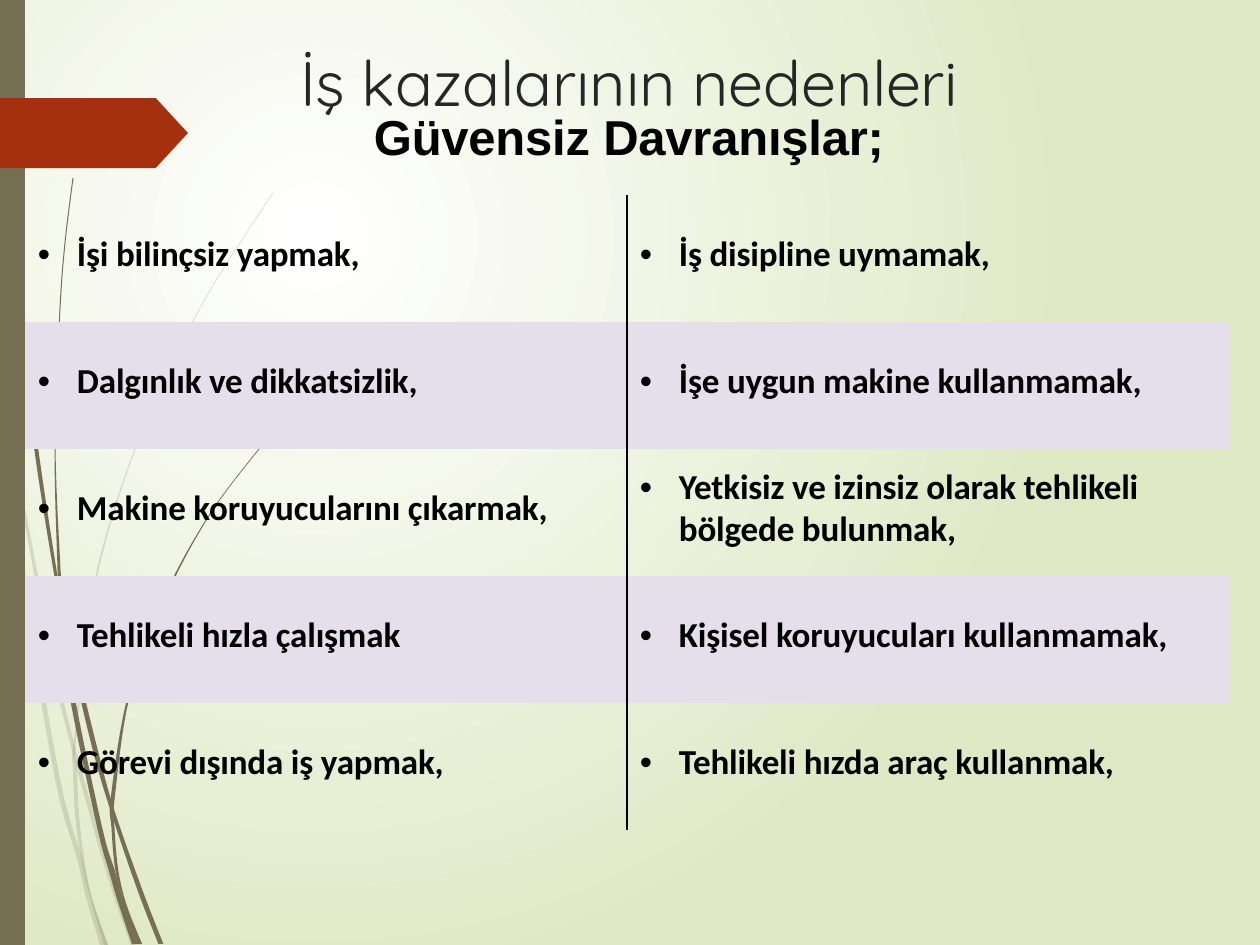
import pptx
import pptx.util
import pptx.dml.color
import pptx.enum.shapes
import pptx.enum.text
import pptx.oxml
import pptx.oxml.ns

RGB = pptx.dml.color.RGBColor
SHAPE = pptx.enum.shapes.MSO_SHAPE
ANCHOR = pptx.enum.text.MSO_ANCHOR
ALIGN = pptx.enum.text.PP_ALIGN
qn = pptx.oxml.ns.qn
NS = pptx.oxml.ns.nsdecls("a")

BLACK = RGB(0, 0, 0)
INK = RGB(0x26, 0x26, 0x26)
OLIVE = RGB(0x76, 0x6F, 0x54)
RUST = RGB(0xA5, 0x30, 0x10)
LILAC = RGB(0xE5, 0xDF, 0xEC)
WHITE = RGB(255, 255, 255)
LIME = RGB(0xDF, 0xE8, 0xC4)
PLAIN = "{2D5ABB26-0587-4C30-8999-92F81FD0307C}"  # no style, no grid

# Grass blades: knots (centre x, y, width), then the knots where a blade is cut
PALE = [
    ([(1, 365, 2), (11, 450, 2), (17, 474, 3), (52, 657, 4), (74, 750, 4),
      (109, 873, 5), (133, 945, 5)], (1, 4)),
    ([(10, 441, 1), (26, 592, 4), (58, 781, 5), (80, 860, 5), (89, 899, 5),
      (104, 945, 8)], (3, 4)),
    ([(273, 193, 1), (200, 308, 1), (139, 439, 1), (95, 582, 2), (75, 740, 2),
      (75, 767, 4), (77, 814, 4), (83, 861, 3), (91, 897, 2), (106, 945, 4)],
     (4, 5, 8)),
]
DARK = [
    ([(3, 0, 1), (4, 60, 1), (7, 138, 1), (18, 293, 2), (36, 447, 4),
      (60, 600, 3), (68, 636, 4), (94, 745, 5), (112, 809, 4), (140, 890, 5),
      (161, 944, 5)], (5, 8)),
    ([(59, 601, 1), (65, 636, 4), (73, 701, 5), (100, 829, 5), (112, 871, 6),
      (121, 902, 6), (137, 944, 10)], (4, 5)),
    ([(73, 178, 1), (65, 243, 1), (60, 309, 1), (55, 440, 1), (59, 568, 3),
      (62, 601, 4), (66, 636, 2)], (4,)),
    ([(272, 433, 1), (212, 511, 1), (164, 599, 2), (129, 695, 2),
      (113, 796, 4), (113, 827, 3), (117, 871, 3), (126, 906, 2),
      (140, 944, 4)], (4, 5, 7)),
]

ROWS = [
    ("İşi bilinçsiz yapmak,", "İş disipline uymamak,"),
    ("Dalgınlık ve dikkatsizlik,", "İşe uygun makine kullanmamak,"),
    ("Makine koruyucularını çıkarmak,",
     "Yetkisiz ve izinsiz olarak tehlikeli bölgede bulunmak,"),
    ("Tehlikeli hızla çalışmak", "Kişisel koruyucuları kullanmamak,"),
    ("Görevi dışında iş yapmak,", "Tehlikeli hızda araç kullanmak,"),
]
STEPS = 6  # curve points from knot to knot


def px(n):
    return pptx.util.Emu(round(n * 914400 / 126))


def write(frame, text, font="Calibri", size=20, color=BLACK, bold=False,
          before=0, left=0, hang=0, bullet=None):
    para = frame.paragraphs[0]
    para.alignment = ALIGN.LEFT
    para.space_before = pptx.util.Pt(before)
    run = para.add_run()
    run.text = text
    run.font.name = font
    run.font.size = pptx.util.Pt(size)
    run.font.bold = bold
    run.font.color.rgb = color
    run._r.get_or_add_rPr().set("spc", "-10")
    props = para._p.get_or_add_pPr()
    props.set("marL", str(px(left)))
    props.set("indent", str(px(-hang)))
    if bullet:
        for mark in (f'<a:buFont {NS} typeface="Arial"/>',
                     f'<a:buChar {NS} char="{bullet}"/>'):
            props.append(pptx.oxml.parse_xml(mark))


def smooth(knots):
    """Points of a Catmull-Rom curve through the knots."""
    ends = [knots[0], *knots, knots[-1]]
    points = []
    for a, b, c, d in zip(ends, ends[1:], ends[2:], ends[3:]):
        for t in (i / STEPS for i in range(STEPS)):
            points.append([
                q + t / 2 * (r - p + t * (2 * p - 5 * q + 4 * r - s
                                          + t * (3 * (q - r) + s - p)))
                for p, q, r, s in zip(a, b, c, d)])
    return points + [knots[-1]]


class Page:
    def __init__(self, deck):
        self.slide = deck.slides.add_slide(deck.slide_layouts[5])
        self.shapes = self.slide.shapes

    def back(self, inner, outer):
        fill = self.slide.background.fill
        fill.gradient()
        for stop, place, color in zip(fill.gradient_stops, (0, 1), (inner, outer)):
            stop.position = place
            stop.color.rgb = color
        grad = next(self.slide.element.iter(qn("a:gradFill")))
        grad.replace(grad.find(qn("a:lin")), pptx.oxml.parse_xml(
            f'<a:path {NS} path="circle"><a:fillToRect l="50000" t="50000" '
            'r="100000" b="100000"/></a:path>'))

    def paint(self, shape, color, alpha=100):
        shape.shadow.inherit = False
        shape.fill.solid()
        shape.fill.fore_color.rgb = color
        shape.line.fill.background()
        if alpha < 100:
            tone = next(shape.element.spPr.iter(qn("a:srgbClr")))
            tone.append(pptx.oxml.parse_xml(
                f'<a:alpha {NS} val="{alpha * 1000}"/>'))

    def blade(self, knots, cuts, alpha=100):
        curve = smooth(knots)
        for start, end in zip((0, *cuts), (*cuts, len(knots) - 1)):
            part = curve[start * STEPS:end * STEPS + 1]
            edge = [(px(x - w / 2), px(y)) for x, y, w in part]
            edge += [(px(x + w / 2), px(y)) for x, y, w in reversed(part)]
            form = self.shapes.build_freeform(*edge[0], scale=1)
            form.add_line_segments(edge[1:], close=True)
            self.paint(form.convert_to_shape(), OLIVE, alpha)

    def block(self, kind, box, color):
        shape = self.shapes.add_shape(kind, *map(px, box))
        self.paint(shape, color)
        return shape

    def place(self, shape, box, text, **style):
        shape.left, shape.top, shape.width, shape.height = map(px, box)
        frame = shape.text_frame
        frame.word_wrap = True
        frame.auto_size = pptx.enum.text.MSO_AUTO_SIZE.NONE
        frame.vertical_anchor = ANCHOR.TOP
        frame.margin_left = frame.margin_right = frame.margin_bottom = 0
        frame.margin_top = px(1)
        write(frame, text, **style)

    def title(self, box, text, **style):
        self.place(self.shapes.title, box, text, **style)

    def label(self, box, text, **style):
        self.place(self.shapes.add_textbox(0, 0, 0, 0), box, text, **style)

    def table(self, box, rows):
        frame = self.shapes.add_table(len(rows), len(rows[0]), *map(px, box))
        table = frame.table
        table.first_row = table.horz_banding = False
        next(frame._element.iter(qn("a:tableStyleId"))).text = PLAIN
        for r, row in enumerate(rows):
            for c, text in enumerate(row):
                self.cell(table.cell(r, c), text, r % 2, "RL"[c])

    def cell(self, cell, text, band, side):
        cell.margin_left = cell.margin_right = cell.margin_top = 0
        cell.margin_bottom = px(8)
        cell.vertical_anchor = ANCHOR.MIDDLE
        if band:
            cell.fill.solid()
            cell.fill.fore_color.rgb = LILAC
        else:
            cell.fill.background()
        cell._tc.get_or_add_tcPr().insert(0, pptx.oxml.parse_xml(
            f'<a:ln{side} {NS} w="9525"><a:solidFill><a:srgbClr val="{BLACK}"/>'
            f'</a:solidFill></a:ln{side}>'))
        write(cell.text_frame, text, bold=True, left=52, hang=39, bullet="•")


def main():
    deck = pptx.Presentation()
    deck.slide_width, deck.slide_height = px(1260), px(945)
    page = Page(deck)

    # Background, grass and side bar
    page.back(WHITE, LIME)
    for knots, cuts in PALE:
        page.blade(knots, cuts, alpha=20)
    for knots, cuts in DARK:
        page.blade(knots, cuts)
    page.block(SHAPE.RECTANGLE, (0, 0, 25, 945), OLIVE)
    arrow = page.block(SHAPE.PENTAGON, (0, 98, 188, 70), RUST)
    arrow.adjustments[0] = 0.46

    # Headings
    page.label((373, 106, 518, 62), "Güvensiz Davranışlar;", font="Arial",
               size=28, bold=True, before=0.9, left=1)
    page.title((294, 42, 908, 78), "İş kazalarının nedenleri",
               font="Quicksand", size=36, color=INK, before=1, left=6)

    # Unsafe acts
    page.table((25, 195, 1204, 635), ROWS)
    deck.save("out.pptx")


if __name__ == "__main__":
    main()
